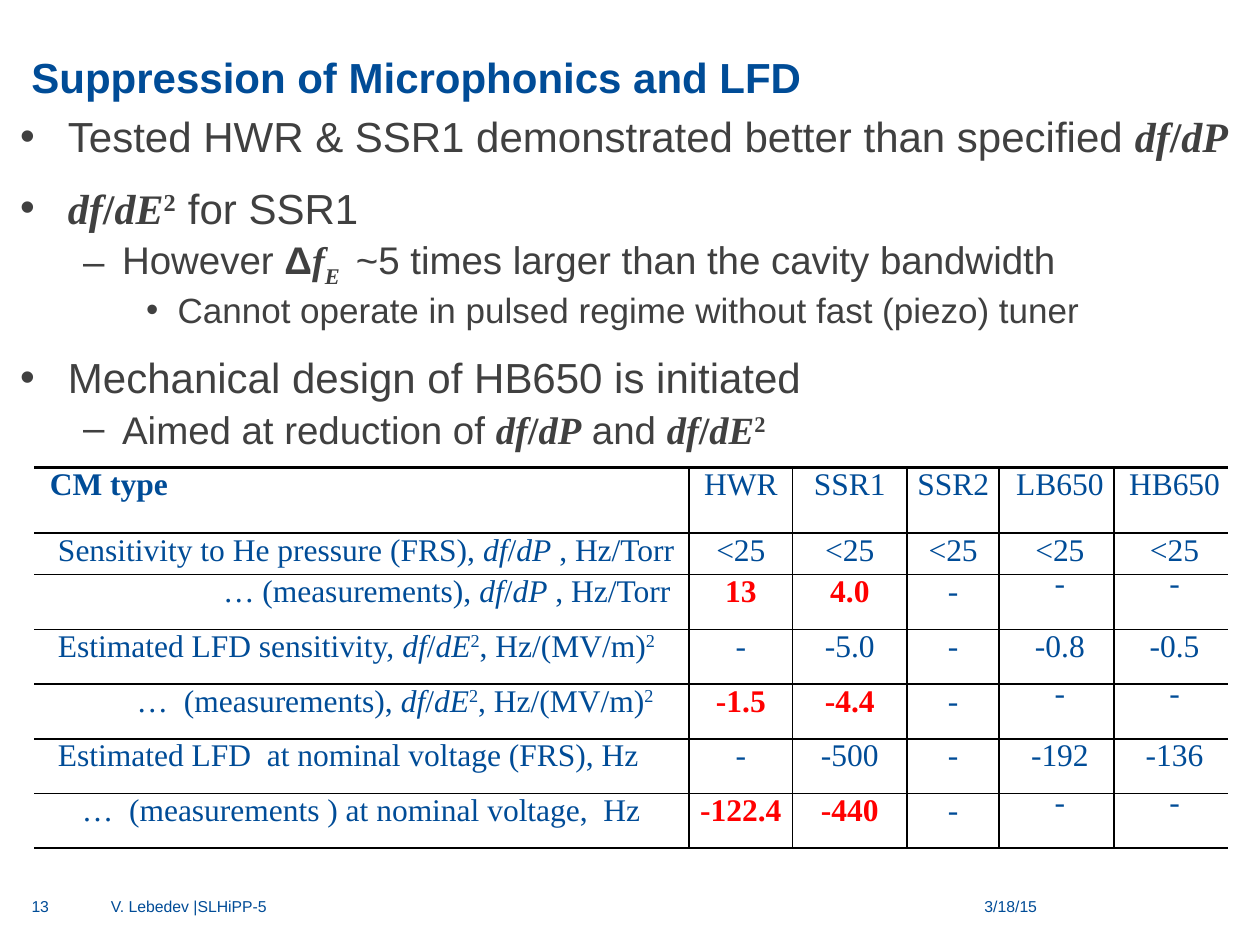
from lxml import etree
from pptx import Presentation
from pptx.dml.color import RGBColor
from pptx.enum import text
from pptx.oxml.ns import qn
from pptx.util import Inches, Pt

COLORS = {"blue": "004C97", "grey": "404040", "red": "FF0000", "line": "000000"}
SANS, SERIF = "Arial", "Times New Roman"
AL = text.PP_ALIGN

prs = Presentation()
prs.slide_width, prs.slide_height = Inches(10), Inches(7.5)
s = prs.slides.add_slide(prs.slide_layouts[6])
# Grid of 40 columns by 30 rows
COL, ROW = prs.slide_width / 40, prs.slide_height / 30


def add_runs(p, runs, size, font, color):
    """Style letters: s serif, b bold, i italic, r red, ^ superscript, _ subscript."""
    for words, style in runs:
        r = p.add_run()
        r.text = words
        f = r.font
        f.size = Pt(size)
        f.name = SERIF if "s" in style else font
        f.bold, f.italic = "b" in style, "i" in style
        f.color.rgb = RGBColor.from_string(COLORS["red" if "r" in style else color])
        for mark, shift in (("^", 30000), ("_", -25000)):
            if mark in style:
                r._r.get_or_add_rPr().set("baseline", str(shift))


def add_box(x, y, w, h, anchor=text.MSO_ANCHOR.TOP):
    sp = s.shapes.add_textbox(int(x * COL), int(y * ROW), int(w * COL), int(h * ROW))
    tf = sp.text_frame
    tf.word_wrap = True
    tf.vertical_anchor = anchor
    tf.margin_left = tf.margin_right = tf.margin_top = tf.margin_bottom = 0
    return tf


# Title
tf = add_box(1, 0.44, 38, 2.8, text.MSO_ANCHOR.BOTTOM)
add_runs(tf.paragraphs[0], [("Suppression of Microphonics and LFD", "b")], 24, SANS, "blue")

# Bullets: margin and hang in columns, space before, bullet, size
LEVELS = [(1.52, 1.52, 12, "•", 24), (3.24, 1.24, 2, "–", 22), (5, 1, 0, "•", 20)]
DF_DP = [("df", "sbi"), ("/", "sb"), ("dP", "sbi")]
DF_DE = [("df", "sbi"), ("/", "sb"), ("dE", "sbi")]
BULLETS = [
    (0, [("Tested HWR & SSR1 demonstrated better than specified ", ""), *DF_DP]),
    (0, [*DF_DE, ("2  ", "sb^"), ("for SSR1", "")]),
    (1, [("However ", ""), ("Δ", "b"), ("f", "sbi"), ("E ", "sbi_"),
         (" ~5 times larger than the cavity bandwidth", "")]),
    (2, [("Cannot operate in pulsed regime without fast (piezo) tuner", "")]),
    (0, [("Mechanical design of HB650 is initiated", "")]),
    (1, [("Aimed at reduction of ", ""), *DF_DP, (" and ", ""), *DF_DE, ("2", "sb^")]),
]
tf = add_box(0.64, 3.52, 39.04, 11.32)
for i, (level, runs) in enumerate(BULLETS):
    margin, hang, before, bullet, size = LEVELS[level]
    p = tf.add_paragraph() if i else tf.paragraphs[0]
    pPr = p._p.get_or_add_pPr()
    pPr.set("marL", str(int(margin * COL)))
    pPr.set("indent", str(int(-hang * COL)))
    etree.SubElement(pPr, qn("a:buFont")).set("typeface", SANS)
    etree.SubElement(pPr, qn("a:buChar")).set("char", bullet)
    p.level = level
    p.space_before = Pt(before if i else 0)
    add_runs(p, runs, size, SANS, "grey")

# Table: label indent in columns, label runs, values
DP = [("df", "i"), ("/", ""), ("dP", "i"), (" , Hz/Torr", "")]
DE = [("df", "i"), ("/", ""), ("dE", "i"), ("2", "^"), (", Hz/(MV/m)", ""), ("2", "^")]
TABLE = [
    (0.5, [("CM type", "b")], "HWR SSR1 SSR2 LB650 HB650"),
    (0.76, [("Sensitivity to He pressure (FRS), ", ""), *DP], "<25 <25 <25 <25 <25"),
    (6, [("… (measurements), ", ""), *DP], "13 4.0 - - -"),
    (0.76, [("Estimated LFD sensitivity, ", ""), *DE], "- -5.0 - -0.8 -0.5"),
    (3.26, [("…  (measurements), ", ""), *DE], "-1.5 -4.4 - - -"),
    (0.76, [("Estimated LFD  at nominal voltage (FRS), Hz", "")], "- -500 - -192 -136"),
    (1.52, [("…  (measurements ) at nominal voltage,  Hz", "")], "-122.4 -440 - - -"),
]
WIDTHS = [20.8, 3.28, 3.64, 2.92, 3.64, 3.64]
HEIGHTS = [2.08, 1.32] + [1.74] * 5
MEASURED = (2, 4, 6)
last_row, last_col = len(HEIGHTS) - 1, len(WIDTHS) - 1

frame = s.shapes.add_table(len(HEIGHTS), len(WIDTHS), int(1.08 * COL), int(14.84 * ROW),
                           int(sum(WIDTHS) * COL), int(sum(HEIGHTS) * ROW))
table = frame.table
table.first_row = table.horz_banding = False
for column, width in zip(table.columns, WIDTHS):
    column.width = int(width * COL)
for row, height in zip(table.rows, HEIGHTS):
    row.height = int(height * ROW)

for i, (indent, label, values) in enumerate(TABLE):
    for j, content in enumerate([label, *values.split()]):
        cell = table.cell(i, j)
        cell.margin_left = cell.margin_right = cell.margin_top = cell.margin_bottom = 0
        p = cell.text_frame.paragraphs[0]
        p.space_after = Pt(3)
        if j == 0:
            p.alignment = AL.JUSTIFY
            p._p.get_or_add_pPr().set("marL", str(int(indent * COL)))
            runs = content
        else:
            p.alignment = AL.CENTER
            runs = [(content, "br" if i in MEASURED and j < 3 else "")]
        if j > 3:
            p._p.get_or_add_pPr().set("marL", str(int(0.22 * COL)))
            if i in MEASURED:
                p.line_spacing = Pt(15.3)
        add_runs(p, runs, 18, SERIF, "blue")

        # Borders: open left and right sides, heavier top and bottom rules
        tcPr = cell._tc.get_or_add_tcPr()
        sides = {"L": 1 if j else 0, "R": 1 if j < last_col else 0,
                 "T": 1 if i else 1.5, "B": 1 if i < last_row else 1.5}
        for side, points in sides.items():
            ln = etree.SubElement(tcPr, qn("a:ln" + side), w=str(int(Pt(points))))
            if points:
                fill = etree.SubElement(ln, qn("a:solidFill"))
                etree.SubElement(fill, qn("a:srgbClr"), val=COLORS["line"])
            else:
                etree.SubElement(ln, qn("a:noFill"))
        cell.fill.background()

# Footer: left, width, words, alignment
FOOTER = [(28.2, 4.72, "3/18/15", AL.RIGHT),
          (3.52, 23.52, "V. Lebedev |SLHiPP-5", AL.LEFT),
          (1, 1.96, "13", AL.LEFT)]
for x, w, words, align in FOOTER:
    p = add_box(x, 28.48, w, 1.04).paragraphs[0]
    p.alignment = align
    add_runs(p, [(words, "")], 9, SANS, "blue")

prs.save("out.pptx")
